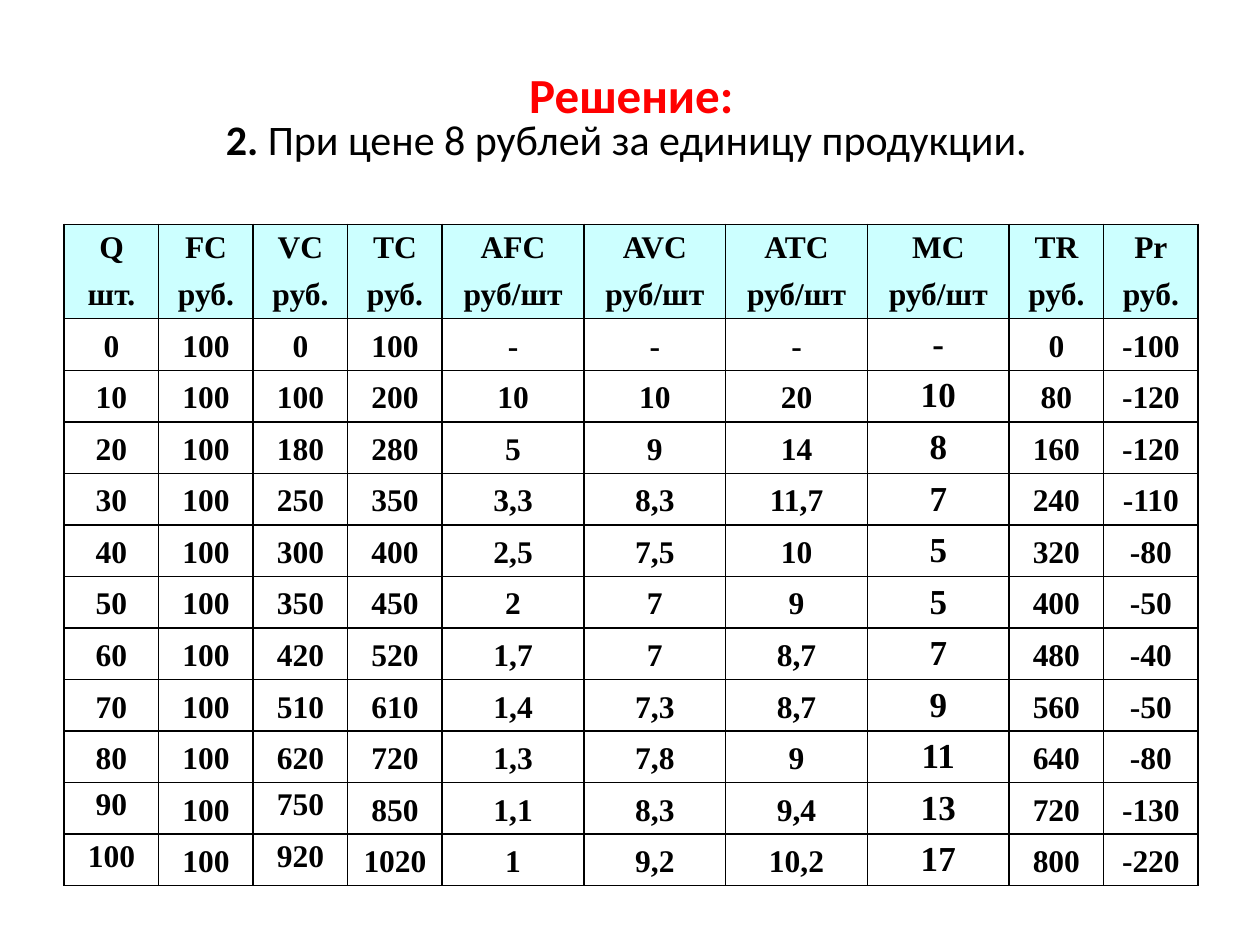
import dataclasses

import pptx
import pptx.dml.color
import pptx.enum.text
import pptx.oxml.ns
import pptx.util
from lxml import etree

Inches = pptx.util.Inches
Pt = pptx.util.Pt
qn = pptx.oxml.ns.qn


@dataclasses.dataclass(frozen=True)
class Theme:
    ink: str = "000000"
    red: str = "FF0000"
    head: str = "CCFFFF"
    sans: str = "Calibri"
    serif: str = "Times New Roman"
    title: int = 28
    sub: int = 24
    body: int = 18
    large: int = 20
    line: int = 1


THEME = Theme()

UNITS = ["шт."] + ["руб."] * 3 + ["руб/шт"] * 4 + ["руб."] * 2
HEAD = ["Q FC VC TC AFC AVC ATC MC TR Pr".split(), UNITS]
DATA = [line.split() for line in (
    "0 100 0 100 - - - - 0 -100",
    "10 100 100 200 10 10 20 10 80 -120",
    "20 100 180 280 5 9 14 8 160 -120",
    "30 100 250 350 3,3 8,3 11,7 7 240 -110",
    "40 100 300 400 2,5 7,5 10 5 320 -80",
    "50 100 350 450 2 7 9 5 400 -50",
    "60 100 420 520 1,7 7 8,7 7 480 -40",
    "70 100 510 610 1,4 7,3 8,7 9 560 -50",
    "80 100 620 720 1,3 7,8 9 11 640 -80",
    "90 100 750 850 1,1 8,3 9,4 13 720 -130",
    "100 100 920 1020 1 9,2 10,2 17 800 -220",
)]
MC = HEAD[0].index("MC")
WIDE = range(4, 8)
# The last two values of Q and VC sit at the top of their cells
HIGH = {(row, col) for row in (11, 12) for col in (0, 2)}


def add_run(para, text, size, font, color=THEME.ink, bold=True):
    run = para.add_run()
    run.text = text
    run.font.size = Pt(size)
    run.font.name = font
    run.font.bold = bold
    run.font.color.rgb = pptx.dml.color.RGBColor.from_string(color)


def add_break(para, size):
    """Add a line break that has its own type size."""
    para.add_line_break()
    mark = para._p.findall(qn("a:br"))[-1]
    etree.SubElement(mark, qn("a:rPr"), sz=str(size * 100))


def add_title(slide):
    title = slide.shapes.title
    title.left, title.top = Inches(0.51), Inches(0.36)
    title.width, title.height = Inches(9), Inches(1.18)
    frame = title.text_frame
    frame.word_wrap = True
    frame.auto_size = pptx.enum.text.MSO_AUTO_SIZE.NONE
    frame.vertical_anchor = pptx.enum.text.MSO_ANCHOR.MIDDLE
    para = frame.paragraphs[0]
    para.alignment = pptx.enum.text.PP_ALIGN.CENTER
    para.line_spacing = 0.8
    add_run(para, "Решение:", THEME.title, THEME.sans, THEME.red)
    add_break(para, THEME.title)
    add_run(para, "2. ", THEME.sub, THEME.sans)
    add_run(para, "При цене 8 рублей за единицу продукции. ",
            THEME.sub, THEME.sans, bold=False)


def set_edges(cell, bare):
    """Rule the four sides of a cell, except the side named by bare."""
    props = cell._tc.get_or_add_tcPr()
    for spot, side in enumerate("LRTB"):
        edge = etree.Element(qn(f"a:ln{side}"), w=str(Pt(THEME.line)))
        if side == bare:
            etree.SubElement(edge, qn("a:noFill"))
        else:
            fill = etree.SubElement(edge, qn("a:solidFill"))
            etree.SubElement(fill, qn("a:srgbClr"), val=THEME.ink)
        props.insert(spot, edge)


def fill_cell(cell, text, row, col):
    anchor = pptx.enum.text.MSO_ANCHOR
    cell.vertical_anchor = anchor.TOP if (row, col) in HIGH else anchor.BOTTOM
    cell.margin_top, cell.margin_bottom = Inches(0.04), Inches(0.05)
    if row < len(HEAD):
        cell.fill.solid()
        cell.fill.fore_color.rgb = pptx.dml.color.RGBColor.from_string(THEME.head)
    else:
        cell.fill.background()
    set_edges(cell, {0: "B", 1: "T"}.get(row))
    para = cell.text_frame.paragraphs[0]
    para.alignment = pptx.enum.text.PP_ALIGN.CENTER
    big = col == MC and row >= len(HEAD)
    add_run(para, text, THEME.large if big else THEME.body, THEME.serif)


def add_costs(slide):
    rows = HEAD + DATA
    frame = slide.shapes.add_table(len(rows), len(UNITS), Inches(0.51),
                                   Inches(1.78), Inches(9), Inches(5.25))
    table = frame.table
    table.first_row = table.horz_banding = False
    for col, column in enumerate(table.columns):
        column.width = Inches(9 / 8 if col in WIDE else 0.75)
    for row, texts in enumerate(rows):
        is_head = row < len(HEAD)
        table.rows[row].height = Inches(
            0.75 / len(HEAD) if is_head else 4.5 / len(DATA))
        for col, text in enumerate(texts):
            fill_cell(table.cell(row, col), text, row, col)


def main():
    deck = pptx.Presentation()
    deck.slide_width, deck.slide_height = Inches(10), Inches(7.5)
    slide = deck.slides.add_slide(deck.slide_layouts[5])
    add_title(slide)
    add_costs(slide)
    deck.save("out.pptx")


if __name__ == "__main__":
    main()
